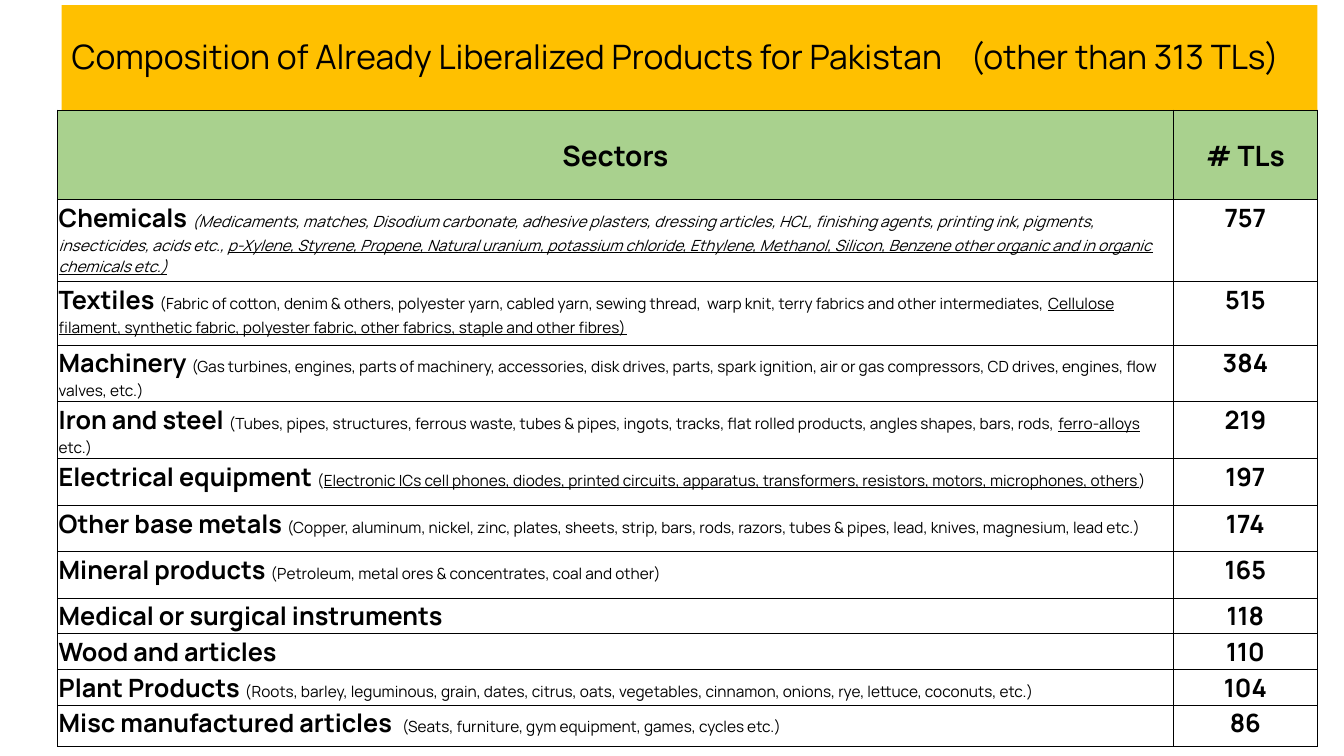
from lxml import etree
from pptx import Presentation
from pptx import util as u
from pptx.dml import color
from pptx.enum import text
from pptx.oxml import ns

FONT = "Manrope"
BLACK, AMBER, GREEN = "000000", "FFC000", "A9D18E"
TITLE = "Composition of Already Liberalized Products for Pakistan\t(other than 313 TLs)"
HEADINGS = ("Sectors", "# TLs")
COLUMN_WIDTHS = (28.12, 3.63)
HEADING_HEIGHT = 2.26
ITALIC_SECTOR = "Chemicals "

# fields: row height, sector, plain detail, underlined detail, closing detail, tariff lines
SECTORS = [
    (2.06, ITALIC_SECTOR,
     "(Medicaments, matches, Disodium carbonate, adhesive plasters, dressing articles, HCL, "
     "finishing agents, printing ink, pigments, insecticides, acids etc., ",
     "p-Xylene, Styrene, Propene, Natural uranium, potassium chloride, Ethylene, Methanol, "
     "Silicon, Benzene other organic and in organic chemicals etc.)", "", 757),
    (1.6, "Textiles ",
     "(Fabric of cotton, denim & others, polyester yarn, cabled yarn, sewing thread,  warp knit, "
     "terry fabrics and other intermediates, ",
     "Cellulose filament, synthetic fabric, polyester fabric, other fabrics, "
     "staple and other fibres)", "", 515),
    (1.17, "Machinery ",
     "(Gas turbines, engines, parts of machinery, accessories, disk drives, parts, "
     "spark ignition, air or gas compressors, CD drives, engines, flow valves, etc.)",
     "", "", 384),
    (1.17, "Iron and steel ",
     "(Tubes, pipes, structures, ferrous waste, tubes & pipes, ingots, tracks, "
     "flat rolled products, angles shapes, bars, rods, ", "ferro-alloys", " etc.)", 219),
    (1.17, "Electrical equipment ", "(",
     "Electronic ICs cell phones, diodes, printed circuits, apparatus, transformers, "
     "resistors, motors, microphones, others", ")", 197),
    (1.17, "Other base metals ",
     "(Copper, aluminum, nickel, zinc, plates, sheets, strip, bars, rods, razors, "
     "tubes & pipes, lead, knives, magnesium, lead etc.)", "", "", 174),
    (1.17, "Mineral products ",
     "(Petroleum, metal ores & concentrates, coal and other)", "", "", 165),
    (0.74, "Medical or surgical instruments", "", "", "", 118),
    (0.74, "Wood and articles", "", "", "", 110),
    (0.89, "Plant Products ",
     "(Roots, barley, leguminous, grain, dates, citrus, oats, vegetables, cinnamon, onions, "
     "rye, lettuce, coconuts, etc.)", "", "", 104),
    (1.04, "Misc manufactured articles  ",
     "(Seats, furniture, gym equipment, games, cycles etc.)", "", "", 86),
]


def rgb(value):
    return color.RGBColor.from_string(value)


def format_run(run, size, bold=False, italic=False, underline=False):
    font = run.font
    font.name, font.size = FONT, u.Pt(size)
    font.bold, font.italic, font.underline = bold, italic, underline
    font.color.rgb = rgb(BLACK)


def add_runs(paragraph, pieces):
    for wording, style in pieces:
        if wording:
            run = paragraph.add_run()
            run.text = wording
            format_run(run, **style)


def add_borders(cell):
    properties = cell._tc.get_or_add_tcPr()
    for index, side in enumerate(("lnL", "lnR", "lnT", "lnB")):
        line = etree.Element(ns.qn(f"a:{side}"), w=str(u.Pt(0.5)))
        fill = etree.SubElement(line, ns.qn("a:solidFill"))
        etree.SubElement(fill, ns.qn("a:srgbClr"), val=BLACK)
        properties.insert(index, line)


def fill_cell(cell, pieces, centred=False, fill=None):
    cell.margin_left = cell.margin_right = cell.margin_top = u.Cm(0.03)
    cell.margin_bottom = 0
    if fill:
        cell.fill.solid()
        cell.fill.fore_color.rgb = rgb(fill)
        cell.vertical_anchor = text.MSO_ANCHOR.MIDDLE
    else:
        cell.fill.background()
    paragraph = cell.text_frame.paragraphs[0]
    paragraph.alignment = text.PP_ALIGN.CENTER if centred else text.PP_ALIGN.LEFT
    add_runs(paragraph, pieces)
    add_borders(cell)


def place_title(title, left, top, width, height):
    title.left, title.top, title.width, title.height = map(u.Cm, (left, top, width, height))
    title.fill.solid()
    title.fill.fore_color.rgb = rgb(AMBER)
    frame = title.text_frame
    frame.text = TITLE
    frame.word_wrap = True
    frame.auto_size = text.MSO_AUTO_SIZE.NONE
    frame.vertical_anchor = text.MSO_ANCHOR.MIDDLE
    paragraph = frame.paragraphs[0]
    paragraph.alignment = text.PP_ALIGN.LEFT
    paragraph.line_spacing = 0.9
    stops = etree.SubElement(paragraph._p.get_or_add_pPr(), ns.qn("a:tabLst"))
    etree.SubElement(stops, ns.qn("a:tab"), pos=str(u.Cm(22.65)), algn="l")
    format_run(paragraph.runs[0], 24)


def add_sector_table(slide, left, top):
    heights = [HEADING_HEIGHT] + [sector[0] for sector in SECTORS]
    table = slide.shapes.add_table(
        len(heights), len(COLUMN_WIDTHS), u.Cm(left), u.Cm(top),
        u.Cm(sum(COLUMN_WIDTHS)), u.Cm(sum(heights))).table
    table.first_row = table.horz_banding = False
    for column, width in zip(table.columns, COLUMN_WIDTHS):
        column.width = u.Cm(width)
    for row, height in zip(table.rows, heights):
        row.height = u.Cm(height)
    for index, heading in enumerate(HEADINGS):
        fill_cell(table.cell(0, index), [(heading, dict(size=20, bold=True))], True, GREEN)
    strong = dict(size=18, bold=True)
    for index, (_, sector, plain, underlined, closing, lines) in enumerate(SECTORS, 1):
        detail = dict(size=11, italic=sector == ITALIC_SECTOR)
        fill_cell(table.cell(index, 0), [
            (sector, strong), (plain, detail),
            (underlined, dict(detail, underline=True)), (closing, detail)])
        fill_cell(table.cell(index, 1), [(str(lines), strong)], True)


def main():
    presentation = Presentation()
    presentation.slide_width, presentation.slide_height = u.Cm(33.87), u.Cm(19.05)
    slide = presentation.slides.add_slide(presentation.slide_layouts[5])
    place_title(slide.shapes.title, 1.55, 0.13, 31.65, 2.67)
    add_sector_table(slide, 1.45, 2.77)
    presentation.save("out.pptx")


if __name__ == "__main__":
    main()
